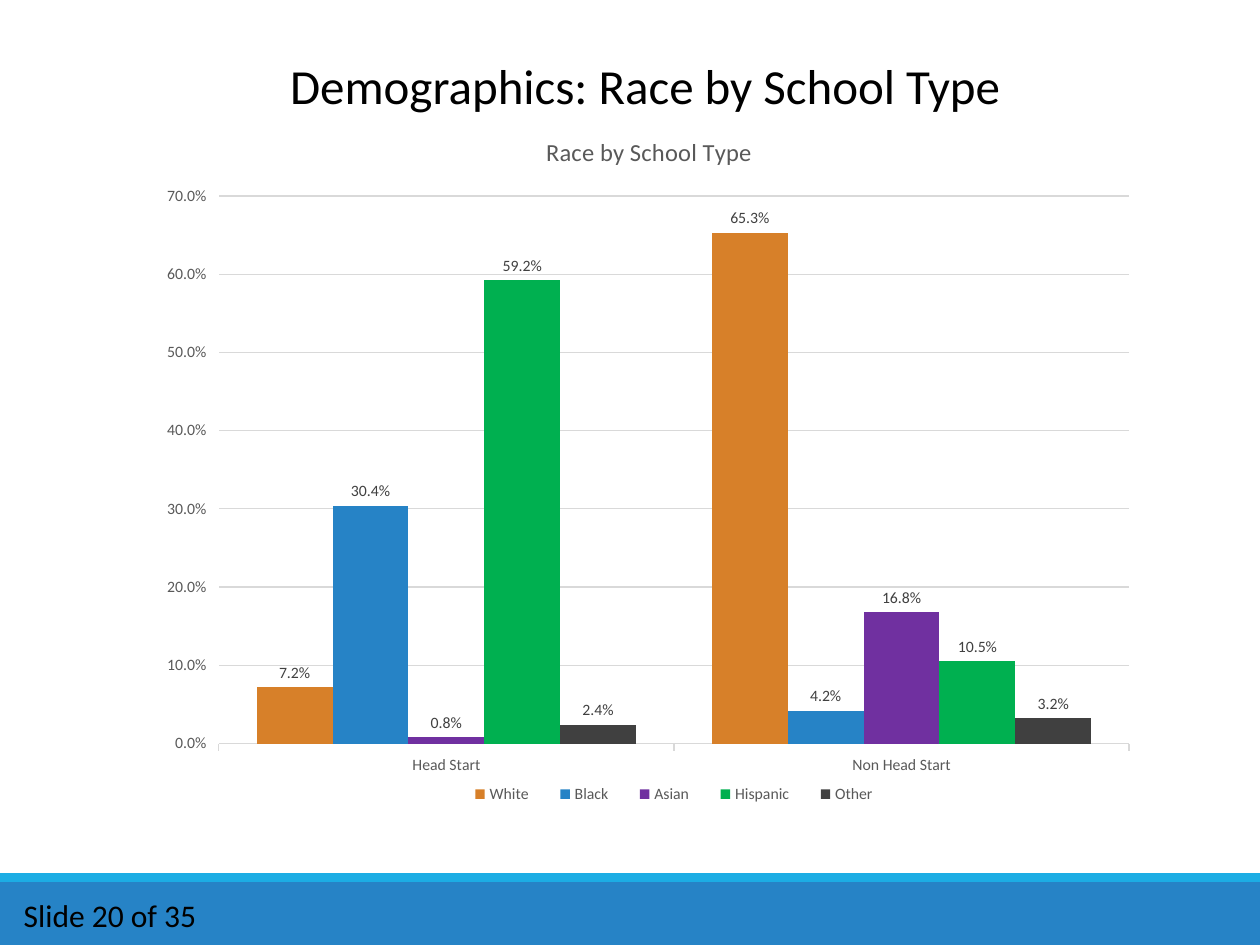
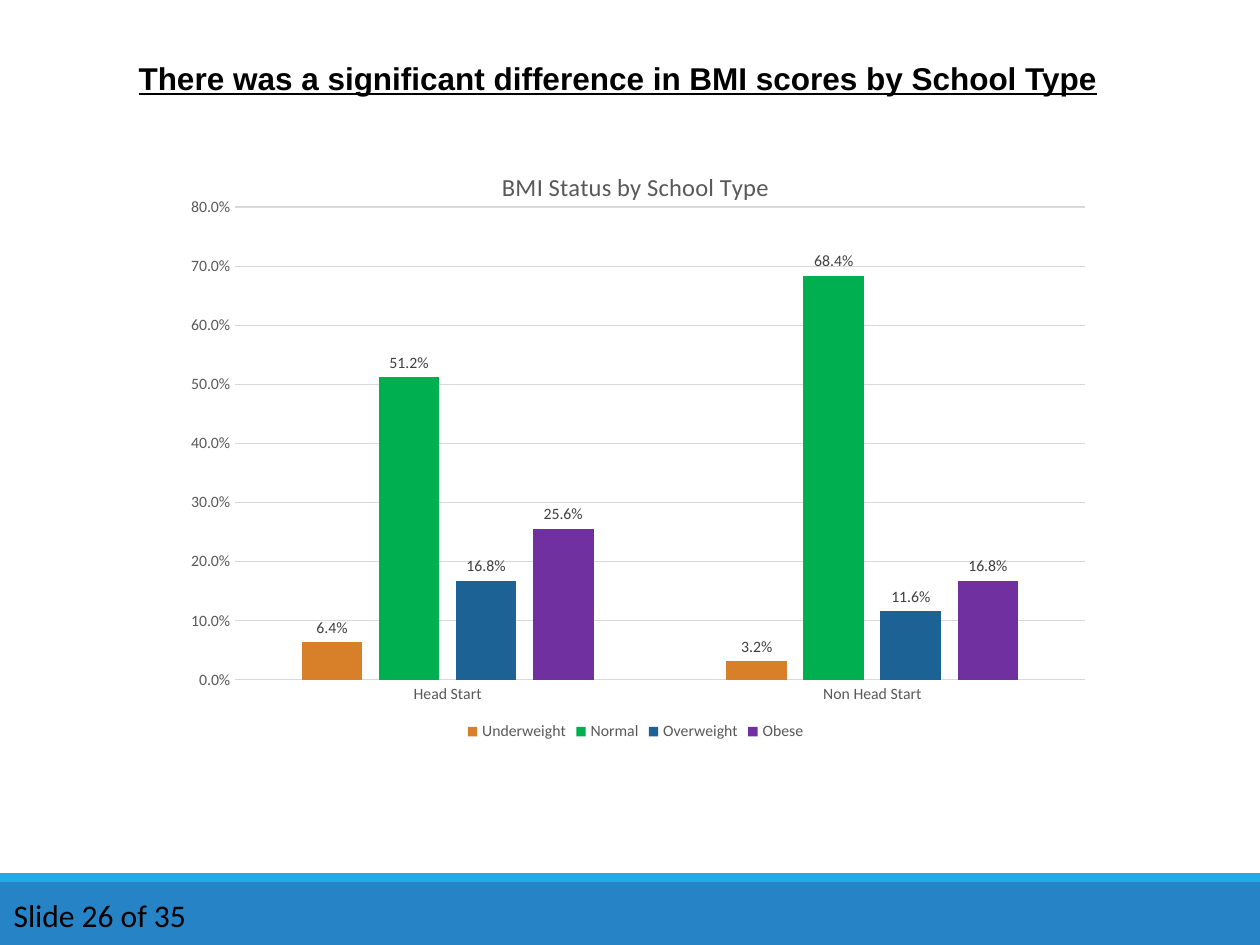
from pptx import Presentation
from pptx.chart.data import CategoryChartData
from pptx.dml.color import RGBColor
from pptx.enum.chart import XL_CHART_TYPE as CT, XL_LABEL_POSITION as LABEL
from pptx.enum.chart import XL_LEGEND_POSITION as LEGEND, XL_TICK_MARK as TICK
from pptx.enum.shapes import MSO_SHAPE as SHAPE
from pptx.enum.text import MSO_ANCHOR, MSO_AUTO_SIZE, PP_ALIGN
from pptx.oxml import parse_xml
from pptx.oxml.ns import nsdecls, qn
from pptx.util import Pt

BLACK = RGBColor(0x00, 0x00, 0x00)
DARK = RGBColor(0x40, 0x40, 0x40)
GREY = RGBColor(0x59, 0x59, 0x59)
RULE = RGBColor(0xD9, 0xD9, 0xD9)
BLUE = RGBColor(0x26, 0x83, 0xC6)
CYAN = RGBColor(0x1C, 0xAD, 0xE4)
NAVY = RGBColor(0x1D, 0x62, 0x94)
ORANGE = RGBColor(0xD7, 0x80, 0x29)
PURPLE = RGBColor(0x70, 0x30, 0xA0)
GREEN = RGBColor(0x00, 0xB0, 0x50)

BANDS = [(504, 36, BLUE), (499, 5, CYAN)]  # top, height, fill
SCHOOLS = ["Head Start", "Non Head Start"]

SLIDES = [
    dict(title="Demographics: Race by School Type", title_box=(82.8, 28, 571.7, 41),
         font="Calibri", size=28, strong=False, align=PP_ALIGN.CENTER,
         number="Slide 20 of 35", number_left=6.5,
         chart_title="Race by School Type", chart_box=(85, 62.6, 571.7, 411.8),
         series=[("White", (0.072, 0.653), ORANGE), ("Black", (0.304, 0.042), BLUE),
                 ("Asian", (0.008, 0.168), PURPLE), ("Hispanic", (0.592, 0.105), GREEN),
                 ("Other", (0.024, 0.032), DARK)],
         top=0.7, gap=100, overlap=0, tick=TICK.OUTSIDE,
         plot=(0.07, 0.12, 0.91, 0.76), legend=(0.3, 0.93, 0.45, 0.04)),
    dict(title="There was a significant difference in BMI scores by School Type",
         title_box=(72, 30.2, 605.5, 29),
         font="Arial", size=18, strong=True, align=PP_ALIGN.LEFT,
         number="Slide 26 of 35", number_left=0.7,
         chart_title="BMI Status by School Type", chart_box=(84.2, 84.2, 558, 342),
         series=[("Underweight", (0.064, 0.032), ORANGE), ("Normal", (0.512, 0.684), GREEN),
                 ("Overweight", (0.168, 0.116), NAVY), ("Obese", (0.256, 0.168), PURPLE)],
         top=0.8, gap=219, overlap=-27, tick=TICK.NONE,
         plot=(0.09, 0.1, 0.87, 0.79), legend=None),
]


def set_font(font, size, color, name="Calibri"):
    font.name, font.size, font.color.rgb = name, Pt(size), color


def set_layout(element, index, box, target=""):
    """Give a chart part a fixed place, as fractions of the chart."""
    for old in element.findall(qn("c:layout")):
        element.remove(old)
    modes = '<c:xMode val="edge"/><c:yMode val="edge"/>'
    sizes = "".join(f'<c:{tag} val="{v}"/>' for tag, v in zip("xywh", box))
    element.insert(index, parse_xml(
        f'<c:layout {nsdecls("c")}><c:manualLayout>{target}{modes}{sizes}'
        '</c:manualLayout></c:layout>'))


prs = Presentation()
prs.slide_width, prs.slide_height = Pt(720), Pt(540)

for d in SLIDES:
    s = prs.slides.add_slide(prs.slide_layouts[5])

    # Bottom bands
    for top, height, fill in BANDS:
        band = s.shapes.add_shape(SHAPE.RECTANGLE, 0, Pt(top), Pt(720), Pt(height))
        band.shadow.inherit = False
        band.fill.solid()
        band.fill.fore_color.rgb = fill
        band.line.fill.background()

    # Title
    title = s.shapes.title
    title.left, title.top, title.width, title.height = map(Pt, d["title_box"])
    tf = title.text_frame
    tf.text = d["title"]
    tf.word_wrap = True
    tf.auto_size = MSO_AUTO_SIZE.NONE
    tf.vertical_anchor = MSO_ANCHOR.TOP
    p = tf.paragraphs[0]
    p.alignment = d["align"]
    set_font(p.font, d["size"], BLACK, d["font"])
    p.font.bold = p.font.underline = d["strong"]

    # Slide number
    tf = s.shapes.add_textbox(Pt(d["number_left"]), Pt(508.3), Pt(119.5), Pt(29)).text_frame
    tf.word_wrap = True
    tf.text = d["number"]
    set_font(tf.paragraphs[0].font, 18, BLACK)

    # Chart
    data = CategoryChartData(number_format="0.0%")
    data.categories = SCHOOLS
    for name, values, _ in d["series"]:
        data.add_series(name, values)
    chart = s.shapes.add_chart(CT.COLUMN_CLUSTERED, *map(Pt, d["chart_box"]), data).chart
    set_font(chart.font, 10, BLACK)
    chart.has_title = True
    tf = chart.chart_title.text_frame
    tf.text = d["chart_title"]
    set_font(tf.paragraphs[0].font, 14, GREY)
    tf.paragraphs[0].font.bold = False

    # Columns and their labels
    plot = chart.plots[0]
    plot.vary_by_categories = False
    plot.gap_width, plot.overlap = d["gap"], d["overlap"]
    for ser, (_, _, color) in zip(plot.series, d["series"]):
        ser.format.fill.solid()
        ser.format.fill.fore_color.rgb = color
        labels = ser.data_labels
        labels.show_value = True
        labels.position = LABEL.OUTSIDE_END
        labels.number_format, labels.number_format_is_linked = "0.0%", False
        set_font(labels.font, 9, DARK)

    # Axes
    cat, val = chart.category_axis, chart.value_axis
    for axis in (cat, val):
        axis.major_tick_mark, axis.minor_tick_mark = d["tick"], TICK.NONE
        set_font(axis.tick_labels.font, 9, GREY)
    val.minimum_scale, val.maximum_scale, val.major_unit = 0, d["top"], 0.1
    val.tick_labels.number_format = "0.0%"
    val.tick_labels.number_format_is_linked = False
    val.format.line.fill.background()
    for line in (cat.format.line, val.major_gridlines.format.line):
        line.color.rgb, line.width = RULE, Pt(0.75)

    # Legend and plot area
    chart.has_legend = True
    chart.legend.position = LEGEND.BOTTOM
    chart.legend.include_in_layout = False
    set_font(chart.legend.font, 9, GREY)
    plot_area = chart.element.find(f'{qn("c:chart")}/{qn("c:plotArea")}')
    set_layout(plot_area, 0, d["plot"], '<c:layoutTarget val="inner"/>')
    if d["legend"]:
        set_layout(plot_area.getparent().find(qn("c:legend")), 1, d["legend"])

prs.save("out.pptx")
